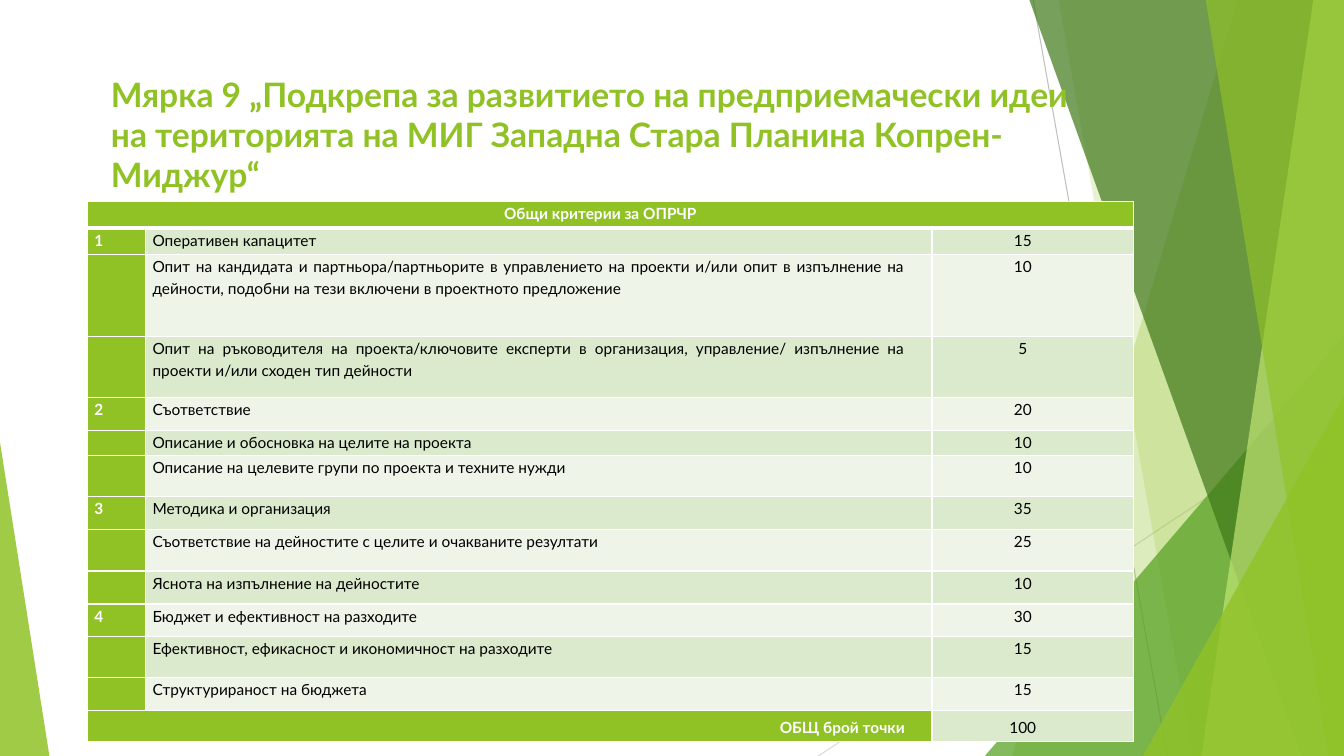
from lxml import etree
from pptx import Presentation
from pptx.dml.color import RGBColor
from pptx.enum import shapes, text
from pptx.oxml import ns
from pptx.util import Pt

COLORS = {
    "lime": "90C226", "leaf": "54A021", "forest": "3F7819", "pale": "C0E474",
    "grey": "BFBFBF", "light_grey": "D9D9D9", "white": "FFFFFF", "black": "000000",
    "band_dark": "DBE9CD", "band_light": "EEF4E8",
}
SLIDE_W, SLIDE_H = 960, 540
BLEED = 0.6
FONT = "Lato"
ALIGN = text.PP_ALIGN
TITLE = ("Мярка 9 „Подкрепа за развитието на предприемачески идеи "
         "на територията на МИГ Западна Стара Планина Копрен-Миджур“")

# Number, criterion, points, row height
CRITERIA = [
    ("1", "Оперативен капацитет", "15", 19),
    ("", "Опит на кандидата и партньора/партньорите в управлението на проекти и/или "
         "опит в изпълнение на дейности, подобни на тези включени в проектното "
         "предложение", "10", 58.5),
    ("", "Опит на ръководителя на проекта/ключовите експерти в организация, "
         "управление/ изпълнение на проекти и/или сходен тип дейности", "5", 43.5),
    ("2", "Съответствие", "20", 23.5),
    ("", "Описание и обосновка на целите на проекта", "10", 18),
    ("", "Описание на целевите групи по проекта и техните нужди", "10", 29.5),
    ("3", "Методика и организация", "35", 23.5),
    ("", "Съответствие на дейностите с целите и очакваните резултати", "25", 29.5),
    ("", "Яснота на изпълнение на дейностите", "10", 23.5),
    ("4", "Бюджет и ефективност на разходите", "30", 23),
    ("", "Ефективност, ефикасност и икономичност на разходите", "15", 29.5),
    ("", "Структурираност на бюджета", "15", 23.5),
]
HEADER = ("Общи критерии за ОПРЧР", "", "", 19)
TOTAL = ("ОБЩ брой точки", "", "100", 22)
COLUMN_WIDTHS = [41.6, 561.8, 144]


def rgb(name):
    return RGBColor.from_string(COLORS[name])


def apply(target, values):
    for name, value in values.items():
        setattr(target, name, value)


def write(p, words, size, color, bold):
    r = p.add_run()
    r.text = words
    apply(r.font, {"name": FONT, "size": Pt(size), "bold": bold})
    r.font.color.rgb = rgb(color)


# Background decoration
def add_line(s, x1, y1, x2, y2, color):
    line = s.shapes.add_connector(shapes.MSO_CONNECTOR.STRAIGHT,
                                  Pt(x1), Pt(y1), Pt(x2), Pt(y2))
    line.line.color.rgb = rgb(color)
    line.line.width = Pt(0.75)
    etree.SubElement(line.element.spPr, ns.qn("a:effectLst"))


def paint(sp, color, opacity):
    sp.shadow.inherit = False
    sp.line.fill.background()
    sp.fill.solid()
    sp.fill.fore_color.rgb = rgb(color)
    clr = sp.element.spPr.find(ns.qn("a:solidFill"))[0]
    etree.SubElement(clr, ns.qn("a:alpha")).set("val", str(opacity * 1000))


def add_band(s, top_x, bottom_x, color, opacity):
    """Slanted band that reaches the right edge of the slide."""
    corners = [(Pt(x), Pt(y)) for x, y in (
        (SLIDE_W, -BLEED), (SLIDE_W, SLIDE_H), (bottom_x, SLIDE_H))]
    builder = s.shapes.build_freeform(Pt(top_x), Pt(-BLEED), scale=1.0)
    builder.add_line_segments(corners, close=True)
    paint(builder.convert_to_shape(), color, opacity)


def add_triangle(s, x, y, width, apex, color, opacity):
    """Triangle that stands on the bottom edge of the slide."""
    sp = s.shapes.add_shape(shapes.MSO_SHAPE.ISOSCELES_TRIANGLE,
                            Pt(x), Pt(y), Pt(width), Pt(SLIDE_H - y))
    sp.adjustments[0] = apex
    paint(sp, color, opacity)


def add_decoration(s):
    add_line(s, 738, 0, 833.8, SLIDE_H, "grey")
    add_line(s, SLIDE_W, 290.2, 584.6, SLIDE_H, "light_grey")
    add_band(s, 884.2, 722.9, "lime", 30)
    add_band(s, 756, 851.8, "lime", 20)
    add_triangle(s, 703.5, 239.8, 256.5, 1, "leaf", 72)
    add_band(s, 735.1, 929.5, "forest", 70)
    add_band(s, 938.2, 858.2, "pale", 70)
    add_band(s, 861.1, 949, "lime", 65)
    add_triangle(s, 816.5, 283, 143.5, 1, "lime", 80)
    add_triangle(s, 0, 316, 35.3, 0, "lime", 85)


# Title
def add_title(s):
    title = s.shapes.title
    apply(title, {"left": Pt(72), "top": Pt(49), "width": Pt(714), "height": Pt(91.5)})
    tf = title.text_frame
    apply(tf, {"word_wrap": True, "auto_size": text.MSO_AUTO_SIZE.NONE,
               "vertical_anchor": text.MSO_ANCHOR.TOP})
    p = tf.paragraphs[0]
    p.alignment = ALIGN.LEFT
    write(p, TITLE, 24, "lime", True)
    # Bring the title in front of the decoration
    title.element.getparent().append(title.element)


# Table
def set_borders(cell, widths):
    tc_pr = cell._tc.get_or_add_tcPr()
    for side, width in zip("LRTB", widths):
        ln = etree.SubElement(tc_pr, ns.qn(f"a:ln{side}"), w=str(Pt(width)))
        fill = etree.SubElement(ln, ns.qn("a:solidFill"))
        etree.SubElement(fill, ns.qn("a:srgbClr"), val=COLORS["white"])


def fill_cell(cell, words, fill, align, anchor, borders):
    set_borders(cell, borders)
    cell.fill.solid()
    cell.fill.fore_color.rgb = rgb(fill)
    apply(cell, {"margin_left": Pt(5), "margin_right": Pt(5), "margin_top": 0,
                 "margin_bottom": 0, "vertical_anchor": anchor})
    p = cell.text_frame.paragraphs[0]
    apply(p, {"alignment": align, "line_spacing": 1.15})
    p._p.get_or_add_pPr().set("marR", str(Pt(14.4)))
    if words:
        strong = fill == "lime"
        write(p, words, 11, "white" if strong else "black", strong)
    else:
        p._p.get_or_add_endParaRPr().set("sz", "1100")


def add_criteria_table(s):
    rows = [HEADER, *CRITERIA, TOTAL]
    last = len(rows) - 1
    frame = s.shapes.add_table(len(rows), 3, Pt(62.4), Pt(144), Pt(sum(COLUMN_WIDTHS)),
                               Pt(sum(row[3] for row in rows)))
    table = frame.table
    for column, width in zip(table.columns, COLUMN_WIDTHS):
        column.width = Pt(width)
    table.cell(0, 0).merge(table.cell(0, 2))
    table.cell(last, 0).merge(table.cell(last, 1))

    for i, (*words, height) in enumerate(rows):
        table.rows[i].height = Pt(height)
        band = "band_dark" if i % 2 else "band_light"
        fills = ["lime", band, band]
        aligns = [ALIGN.JUSTIFY, ALIGN.JUSTIFY, ALIGN.CENTER]
        anchor = text.MSO_ANCHOR.TOP
        if i == 0:
            fills, aligns = ["lime"] * 3, [ALIGN.CENTER] * 3
        elif i == last:
            fills = ["lime", "lime", "band_dark"]
            aligns[0] = ALIGN.RIGHT
            anchor = text.MSO_ANCHOR.MIDDLE
        borders = (1, 1, 3 if i == 1 else 1, 3 if i == 0 else 1)
        for j in range(3):
            fill_cell(table.cell(i, j), words[j], fills[j], aligns[j], anchor, borders)


def main():
    prs = Presentation()
    prs.slide_width, prs.slide_height = Pt(SLIDE_W), Pt(SLIDE_H)
    s = prs.slides.add_slide(prs.slide_layouts[5])
    add_decoration(s)
    add_title(s)
    add_criteria_table(s)
    prs.save("out.pptx")


if __name__ == "__main__":
    main()
